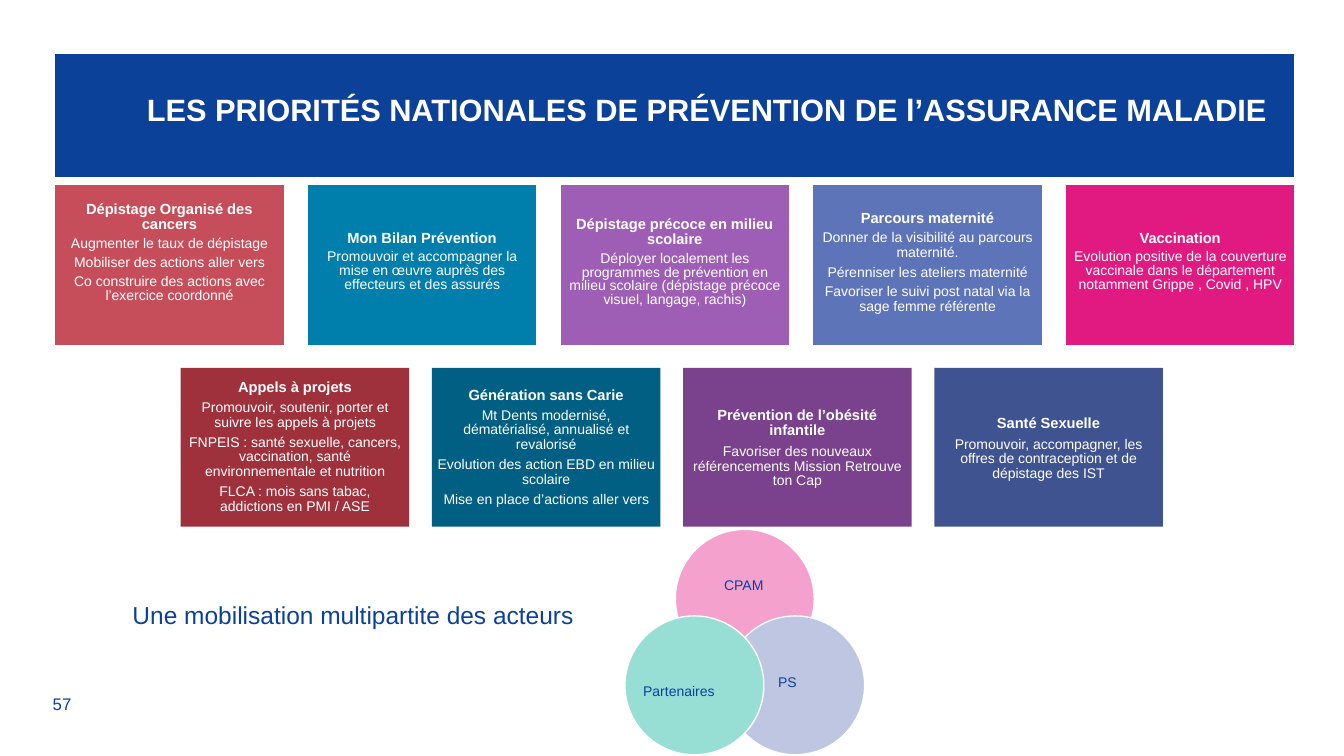
from dataclasses import dataclass

from lxml.etree import SubElement
from pptx import Presentation
from pptx.dml.color import RGBColor
from pptx.enum.shapes import MSO_SHAPE as Preset
from pptx.enum.text import MSO_ANCHOR as Anchor, PP_ALIGN as Align
from pptx.oxml.ns import qn
from pptx.util import Cm, Pt


@dataclass(frozen=True)
class Theme:
    font: str = "Arial"
    navy: str = "0C419A"
    white: str = "FFFFFF"
    header_size: float = 22
    title_size: float = 10.5
    body_size: float = 10
    slogan_size: float = 17.5
    number_size: float = 12
    # Card fills, from left to right
    top_fills: tuple = ("C64E5A", "007EAC", "9F5EB5", "5E74B8", "E01A81")
    lower_fills: tuple = ("9E313C", "005F82", "7A418D", "405391")
    circle_fills: tuple = ("F4A1CD", "BEC6E2", "97DFD5")


theme = Theme()


def write(paragraph, text, size, color, bold=False, **layout):
    """Fill one paragraph and format it."""
    paragraph.text = text
    for name, value in layout.items():
        setattr(paragraph, name, value)
    formats = {"name": theme.font, "size": Pt(size), "bold": bold}
    for run in paragraph.runs:
        for name, value in formats.items():
            setattr(run.font, name, value)
        run.font.color.rgb = RGBColor.from_string(color)


def write_card(frame, title, items, leading, gap):
    """Write a centred bold title and the actions below it."""
    write(frame.paragraphs[0], title, theme.title_size, theme.white, True,
          alignment=Align.CENTER, line_spacing=Pt(11))
    for item in items:
        write(frame.add_paragraph(), item, theme.body_size, theme.white,
              alignment=Align.CENTER, line_spacing=Pt(leading), space_before=Pt(gap))


presentation = Presentation()
presentation.slide_width, presentation.slide_height = Cm(33.87), Cm(19.05)
slide = presentation.slides.add_slide(presentation.slide_layouts[6])
shapes = slide.shapes

# Grid shared by the table and the lower row of cards
left, card_width, gutter = 1.39, 5.76, 0.57
pitch = card_width + gutter
side_margin = 0.1

# Each card: top margin, leading, gap, title, actions
top_cards = [
    (0.52, 9.8, 3.8, "Dépistage Organisé des cancers", [
        "Augmenter le taux de dépistage",
        "Mobiliser des actions aller vers",
        "Co construire des actions avec l’exercice coordonné"]),
    (1.25, 9.8, 3.4, "Mon Bilan Prévention", [
        "Promouvoir et accompagner la mise en œuvre auprès des effecteurs et des assurés"]),
    (0.89, 9.8, 3.8, "Dépistage précoce en milieu scolaire", [
        "Déployer localement les programmes de prévention en milieu scolaire "
        "(dépistage précoce visuel, langage, rachis)"]),
    (0.74, 11, 2.8, "Parcours maternité", [
        "Donner de la visibilité au parcours maternité.",
        "Pérenniser les ateliers maternité",
        "Favoriser le suivi post natal via la sage femme référente"]),
    (1.25, 9.8, 3.4, "Vaccination", [
        "Evolution positive de la couverture vaccinale dans le département "
        "notamment Grippe , Covid , HPV"]),
]
lower_cards = [
    (0.3, 10.4, 4, "Appels à projets", [
        "Promouvoir, soutenir, porter et suivre les appels à projets",
        "FNPEIS : santé sexuelle, cancers, vaccination, santé environnementale et nutrition",
        "FLCA : mois sans tabac,\vaddictions en PMI / ASE"]),
    (0.5, 10.4, 4, "Génération sans Carie", [
        "Mt Dents modernisé,\vdématérialisé, annualisé et revalorisé",
        "Evolution des action EBD en milieu scolaire",
        "Mise en place d’actions aller vers"]),
    (1.01, 10.4, 4.4, "Prévention de l’obésité\vinfantile", [
        "Favoriser des nouveaux référencements Mission Retrouve ton Cap"]),
    (1.21, 10.4, 4.4, "Santé Sexuelle", [
        "Promouvoir, accompagner, les offres de contraception et de dépistage des IST"]),
]

# Table: header across all columns, cards in every second column
column_count = 2 * len(top_cards) - 1
frame = shapes.add_table(2, column_count, Cm(left), Cm(1.37), Cm(31.08), Cm(7.32))
table = frame.table
table.first_row = table.horz_banding = False
table._tbl.tblPr.find(qn("a:tableStyleId")).text = "{2D5ABB26-0587-4C30-8999-92F81FD0307C}"
for row, height in zip(table.rows, (3.2, 4.12)):
    row.height = Cm(height)
for index, column in enumerate(table.columns):
    column.width = Cm(gutter if index % 2 else card_width)

header = table.cell(0, 0)
header.merge(table.cell(0, column_count - 1))
header.margin_left, header.margin_right, header.margin_top = Cm(2.31), 0, Cm(1)
header.fill.solid()
header.fill.fore_color.rgb = RGBColor.from_string(theme.navy)
write(header.text_frame.paragraphs[0],
      "LES PRIORITÉS NATIONALES DE PRÉVENTION DE l’ASSURANCE MALADIE",
      theme.header_size, theme.white, True)

for index, (top, leading, gap, title, items) in enumerate(top_cards):
    cell = table.cell(1, 2 * index)
    margins = {"margin_left": side_margin, "margin_right": side_margin,
               "margin_top": top, "margin_bottom": 0}
    for name, value in margins.items():
        setattr(cell, name, Cm(value))
    cell.fill.solid()
    cell.fill.fore_color.rgb = RGBColor.from_string(theme.top_fills[index])
    write_card(cell.text_frame, title, items, leading, gap)

# White rule between the header and the cards
for row_index, edge in enumerate(("a:lnB", "a:lnT")):
    for column_index in range(column_count):
        properties = table.cell(row_index, column_index)._tc.get_or_add_tcPr()
        border = properties.makeelement(qn(edge), {"w": str(Pt(6.48))})
        fill = SubElement(border, qn("a:solidFill"))
        SubElement(fill, qn("a:srgbClr"), {"val": theme.white})
        properties.insert(0, border)

# Lower row of cards, shifted by half a step
for index, (top, leading, gap, title, items) in enumerate(lower_cards):
    card = shapes.add_shape(Preset.RECTANGLE, Cm(left + pitch * (index + 0.5)), Cm(9.27),
                            Cm(card_width), Cm(4))
    card.shadow.inherit = False
    card.fill.solid()
    card.fill.fore_color.rgb = RGBColor.from_string(theme.lower_fills[index])
    card.line.fill.background()
    text_frame = card.text_frame
    formats = {"margin_left": Cm(side_margin), "margin_right": Cm(side_margin),
               "margin_top": Cm(top), "margin_bottom": 0,
               "vertical_anchor": Anchor.TOP, "word_wrap": True}
    for name, value in formats.items():
        setattr(text_frame, name, value)
    write_card(text_frame, title, items, leading, gap)

# Overlapping circles of the partners
circles = [(17.02, 13.34), (18.29, 15.52), (15.75, 15.52)]
for (x, y), color in zip(circles, theme.circle_fills):
    circle = shapes.add_shape(Preset.OVAL, Cm(x), Cm(y), Cm(3.5), Cm(3.5))
    circle.shadow.inherit = False
    circle.fill.solid()
    circle.fill.fore_color.rgb = RGBColor.from_string(color)
    circle.line.color.rgb = RGBColor.from_string(theme.white)
    circle.line.width = Pt(0.96)

# Labels, slogan and page number
labels = [
    ("CPAM", 18.25, 14.52, 1.1, 0.45, theme.body_size),
    ("PS", 19.61, 16.98, 1.1, 0.45, theme.body_size),
    ("Partenaires", 16.21, 17.2, 1.9, 0.45, theme.body_size),
    ("Une mobilisation multipartite des acteurs", 3.34, 15.12, 11.4, 0.8, theme.slogan_size),
    ("57", 1.33, 17.49, 0.6, 0.55, theme.number_size),
]
for text, x, y, width, height, size in labels:
    text_frame = shapes.add_textbox(Cm(x), Cm(y), Cm(width), Cm(height)).text_frame
    for side in ("left", "right", "top", "bottom"):
        setattr(text_frame, f"margin_{side}", 0)
    text_frame.word_wrap = True
    write(text_frame.paragraphs[0], text, size, theme.navy)

presentation.save("out.pptx")
